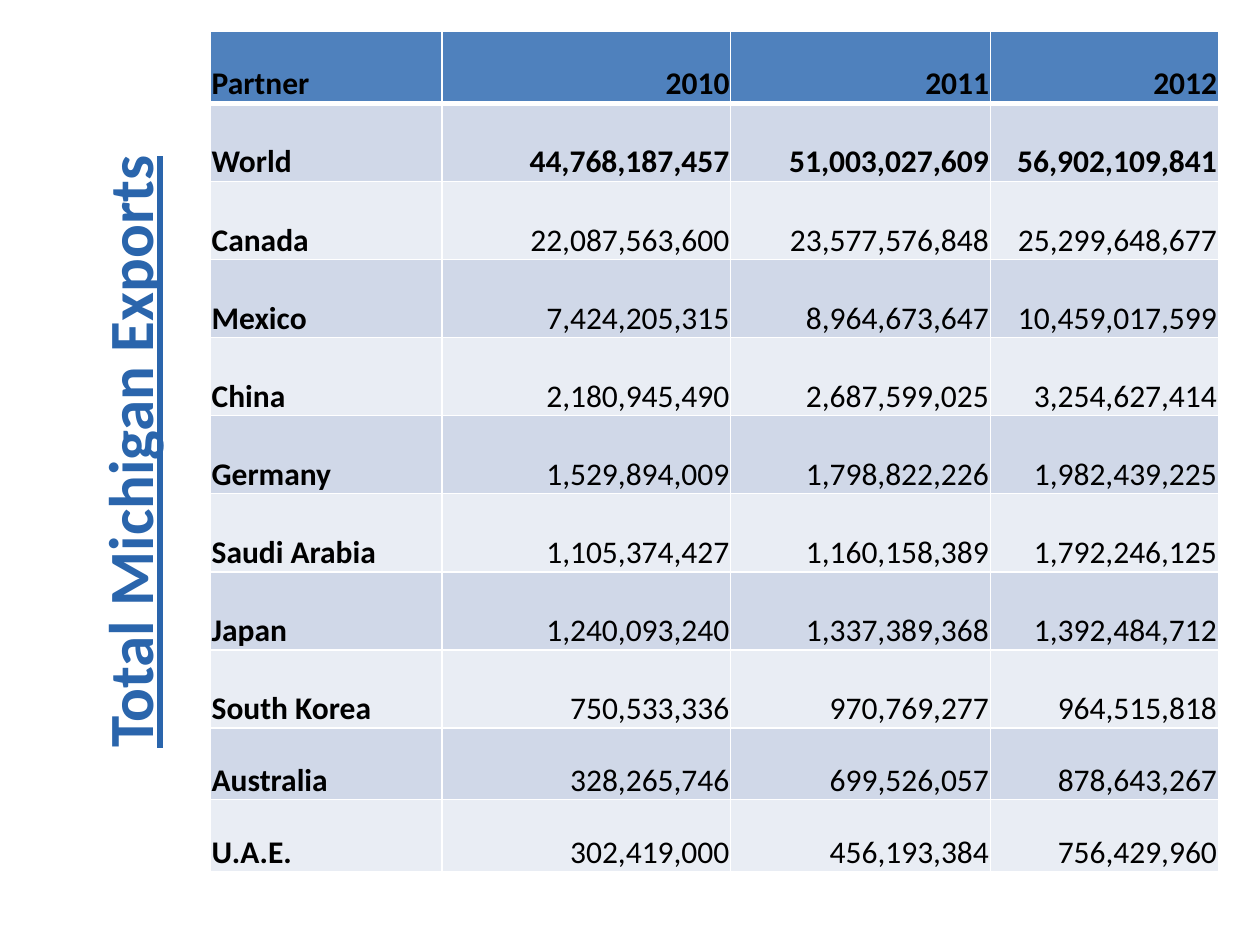
"""Build a slide with a table of Michigan exports by trading partner."""
import lxml.etree
import pptx
import pptx.dml.color
import pptx.enum.text
import pptx.oxml.ns
import pptx.util

Inches = pptx.util.Inches
Pt = pptx.util.Pt
Align = pptx.enum.text.PP_ALIGN
Anchor = pptx.enum.text.MSO_ANCHOR
qn = pptx.oxml.ns.qn


def color(value):
    return pptx.dml.color.RGBColor.from_string(value)


def add_border(cell, side, points):
    line = lxml.etree.SubElement(cell._tc.get_or_add_tcPr(), qn(f"a:ln{side}"), w=str(Pt(points)))
    fill = lxml.etree.SubElement(line, qn("a:solidFill"))
    lxml.etree.SubElement(fill, qn("a:srgbClr"), val="FFFFFF")


exports = [
    ("Partner", "2010", "2011", "2012"),
    ("World", "44,768,187,457", "51,003,027,609", "56,902,109,841"),
    ("Canada", "22,087,563,600", "23,577,576,848", "25,299,648,677"),
    ("Mexico", "7,424,205,315", "8,964,673,647", "10,459,017,599"),
    ("China", "2,180,945,490", "2,687,599,025", "3,254,627,414"),
    ("Germany", "1,529,894,009", "1,798,822,226", "1,982,439,225"),
    ("Saudi Arabia", "1,105,374,427", "1,160,158,389", "1,792,246,125"),
    ("Japan", "1,240,093,240", "1,337,389,368", "1,392,484,712"),
    ("South Korea", "750,533,336", "970,769,277", "964,515,818"),
    ("Australia", "328,265,746", "699,526,057", "878,643,267"),
    ("U.A.E.", "302,419,000", "456,193,384", "756,429,960"),
]
column_widths = [1.84, 2.29, 2.06, 1.81]
row_heights = [0.57] + [0.62] * 8 + [0.57] * 2

deck = pptx.Presentation()
deck.slide_width = Inches(10)
deck.slide_height = Inches(7.5)
page = deck.slides.add_slide(deck.slide_layouts[6])

title = page.shapes.add_textbox(Inches(0.67), Inches(0.92), Inches(0.81), Inches(5.33))
frame = title.text_frame
frame.word_wrap = True
frame._txBody.bodyPr.set("vert", "vert270")
para = frame.paragraphs[0]
para.text = "Total Michigan Exports"
para.alignment = Align.CENTER
para.font.name = "Calibri"
para.font.size = Pt(36)
para.font.bold = True
para.font.underline = True
para.font.color.rgb = color("2A65AC")

table = page.shapes.add_table(
    len(exports), len(column_widths), Inches(1.67), Inches(0.25), Inches(8), Inches(6.67)
).table
for column, width in zip(table.columns, column_widths):
    column.width = Inches(width)
for row, height in zip(table.rows, row_heights):
    row.height = Inches(height)

for row_index, values in enumerate(exports):
    if row_index == 0:
        row_fill = "4F81BD"
    else:
        row_fill = "D0D8E8" if row_index % 2 else "E9EDF4"
    for column_index, value in enumerate(values):
        cell = table.cell(row_index, column_index)
        cell.margin_left = cell.margin_right = cell.margin_top = Inches(0.01)
        cell.margin_bottom = 0
        cell.vertical_anchor = Anchor.BOTTOM
        add_border(cell, "L", 1)
        add_border(cell, "R", 1)
        add_border(cell, "T", 3 if row_index == 1 else 1)
        add_border(cell, "B", 3 if row_index == 0 else 1)
        cell.fill.solid()
        cell.fill.fore_color.rgb = color(row_fill)
        para = cell.text_frame.paragraphs[0]
        para.text = value
        para.alignment = Align.RIGHT if column_index else Align.LEFT
        para.font.name = "Calibri"
        para.font.size = Pt(18)
        para.font.bold = row_index < 2 or column_index == 0
        para.font.color.rgb = color("000000")

deck.save("out.pptx")
